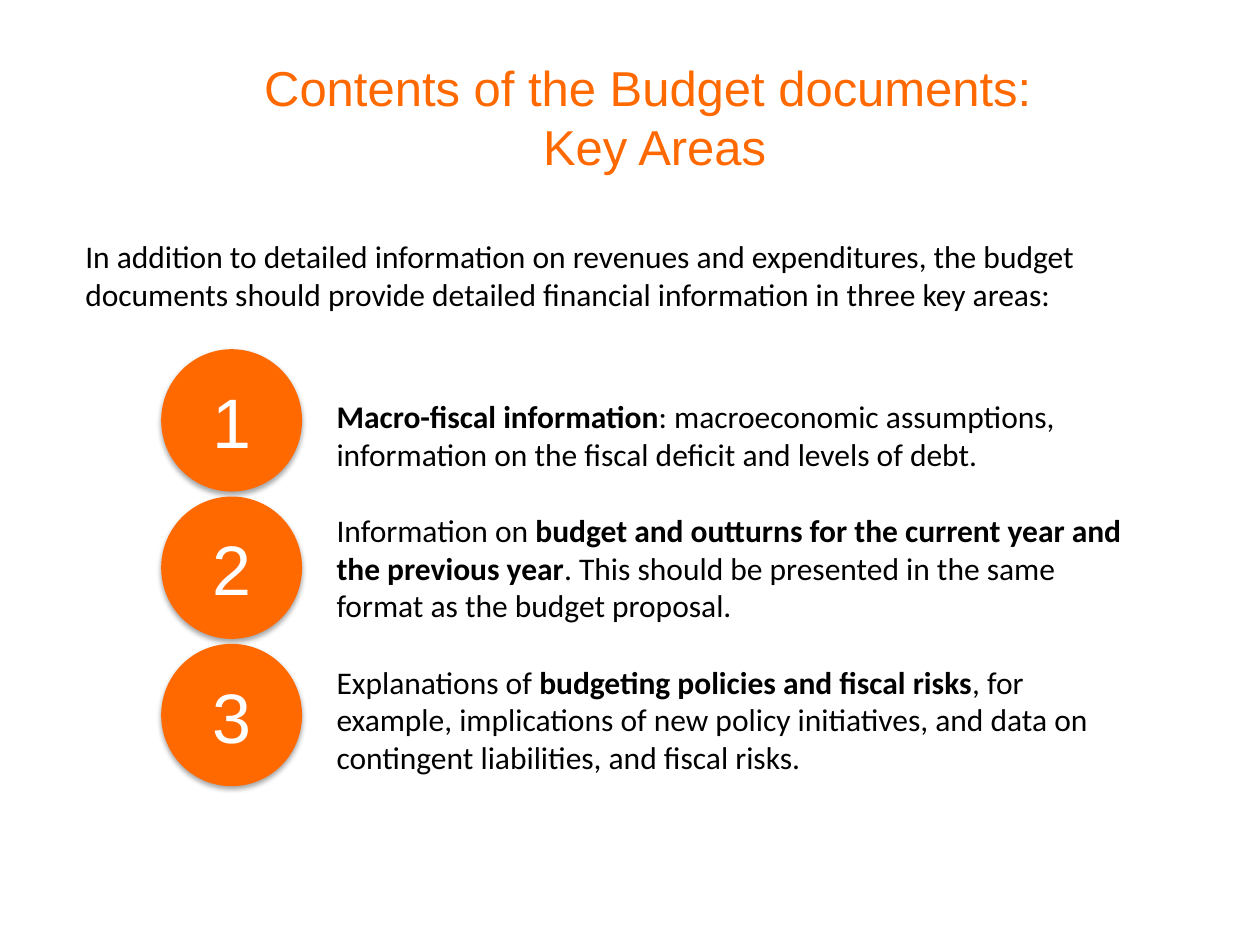
from lxml.etree import SubElement
from pptx import Presentation
from pptx.dml.color import RGBColor
from pptx.enum.shapes import MSO_SHAPE as Shape
from pptx.enum.text import MSO_ANCHOR as Anchor, MSO_AUTO_SIZE as AutoSize, PP_ALIGN as Align
from pptx.oxml.ns import qn
from pptx.util import Cm, Pt

TITLE = ["Contents of the Budget documents: ", "Key Areas"]
INTRO = ("In addition to detailed information on revenues and expenditures, the budget "
         "documents should provide detailed financial information in three key areas:")
# Each area is a list of (text, bold) spans.
AREAS = [
    [("Macro-fiscal information", True),
     (": macroeconomic assumptions, information on the fiscal deficit and levels of debt.", False)],
    [("Information on ", False),
     ("budget and outturns for the current year and the previous year", True),
     (". This should be presented in the same format as the budget proposal.", False)],
    [("Explanations of ", False),
     ("budgeting policies and fiscal risks", True),
     (", for example, implications of new policy initiatives, and data on contingent "
      "liabilities, and fiscal risks.", False)],
]

ORANGE = RGBColor(0xFF, 0x69, 0x00)
BLACK = RGBColor(0, 0, 0)
WHITE = RGBColor(0xFF, 0xFF, 0xFF)

CIRCLE_LEFT, CIRCLE_TOP = 3.25, 7.04
CIRCLE_WIDTH, CIRCLE_HEIGHT, CIRCLE_STEP = 2.84, 2.87, 2.97


def place(shape, left, top, width, height):
    shape.left, shape.top, shape.width, shape.height = map(Cm, (left, top, width, height))


def write(shape, paragraphs, *, font="Calibri", size=18, color=BLACK,
          align=Align.LEFT, anchor=Anchor.TOP, gap=0, wrap=True):
    """Fill a shape with paragraphs, each a list of (text, bold) spans; gap is in points."""
    frame = shape.text_frame
    frame.word_wrap = wrap
    frame.auto_size = AutoSize.NONE
    frame.vertical_anchor = anchor
    for index, spans in enumerate(paragraphs):
        para = frame.add_paragraph() if index else frame.paragraphs[0]
        para.alignment = align
        para.space_before = Pt(gap if index else 0)
        for text, bold in spans:
            span = para.add_run()
            span.text = text
            span.font.name, span.font.size, span.font.bold = font, Pt(size), bold
            span.font.color.rgb = color


def remove_bullets(shape):
    for para in shape.text_frame.paragraphs:
        properties = para._p.get_or_add_pPr()
        properties.set("marL", "0")
        properties.set("indent", "0")
        SubElement(properties, qn("a:buNone"))


def add_soft_shadow(shape):
    shape.shadow.inherit = False
    effects = shape._element.spPr.find(qn("a:effectLst"))
    shadow = SubElement(effects, qn("a:outerShdw"), blurRad=str(Pt(3.1)), dist=str(Pt(1.8)),
                        dir="5400000", rotWithShape="0")
    color = SubElement(shadow, qn("a:srgbClr"), val=str(BLACK))
    SubElement(color, qn("a:alpha"), val="35000")


def add_number(page, index):
    circle = page.shapes.add_shape(Shape.OVAL, 0, 0, 0, 0)
    place(circle, CIRCLE_LEFT, CIRCLE_TOP + index * CIRCLE_STEP, CIRCLE_WIDTH, CIRCLE_HEIGHT)
    circle.fill.solid()
    circle.fill.fore_color.rgb = ORANGE
    circle.line.fill.background()
    add_soft_shadow(circle)
    write(circle, [[(str(index + 1), False)]], font="Arial", size=40, color=WHITE,
          align=Align.CENTER, anchor=Anchor.MIDDLE)


def main():
    deck = Presentation()
    deck.slide_width, deck.slide_height = Cm(25.4), Cm(19.05)
    page = deck.slides.add_slide(deck.slide_layouts[1])

    title = page.shapes.title
    place(title, 4.98, 1.04, 16.43, 2.64)
    write(title, [[(line, False)] for line in TITLE], font="Arial", size=28, color=ORANGE,
          align=Align.CENTER, wrap=False)

    intro = page.shapes.add_textbox(0, 0, 0, 0)
    place(intro, 1.47, 4.65, 22.45, 1.8)
    write(intro, [[(INTRO, False)]])

    areas = page.placeholders[1]
    place(areas, 6.53, 7.87, 16.48, 8.71)
    write(areas, AREAS, gap=22)
    remove_bullets(areas)

    for index in range(len(AREAS)):
        add_number(page, index)

    deck.save("out.pptx")


if __name__ == "__main__":
    main()
